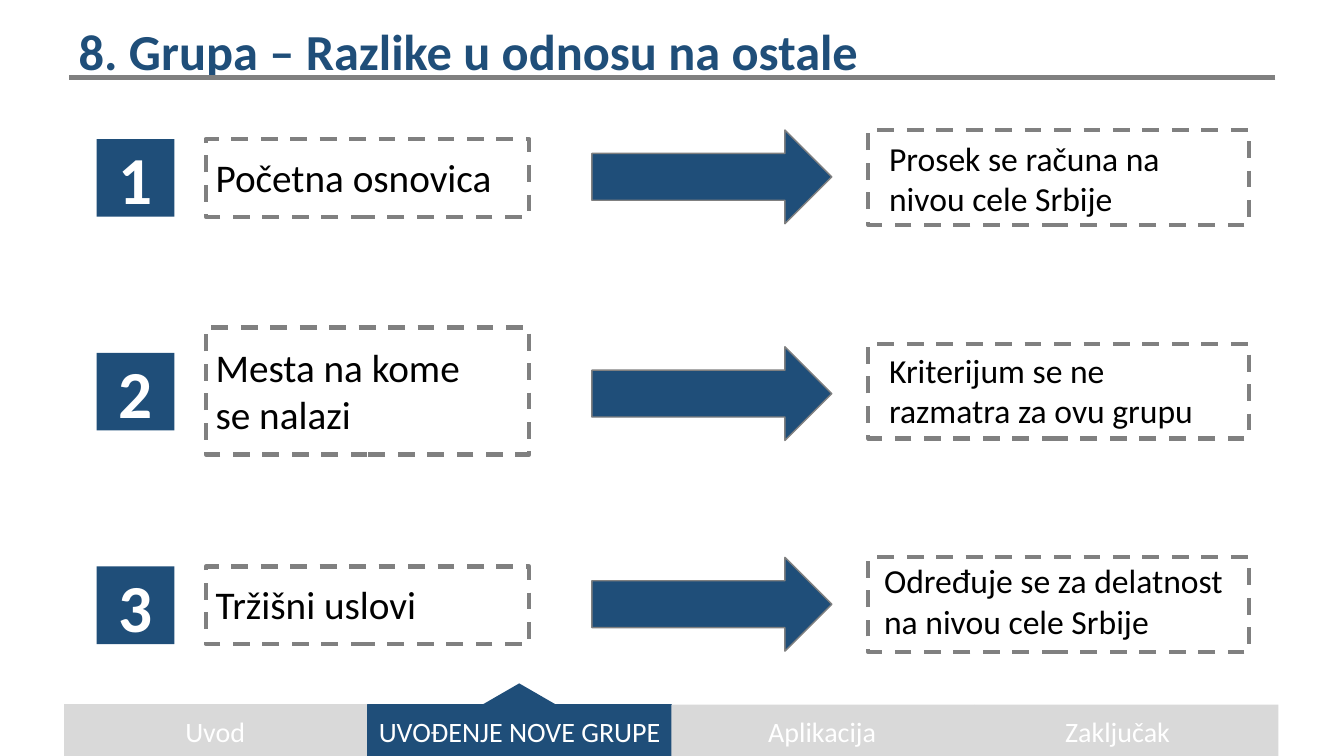
"""Build the slide on how group 8 differs from the others."""
from pptx import Presentation
from pptx.dml.color import RGBColor
from pptx.enum import dml, shapes, text
from pptx.util import Inches, Pt
from lxml import etree

TITLE = "8. Grupa – Razlike u odnosu na ostale"
ROWS = [
    {"top": 1.38, "item": "Početna osnovica", "item_at": (1.47, 3.21, 0.57),
     "frame": (1.38, 0.77), "arrow": 1.29,
     "note": "Prosek se računa na nivou cele Srbije",
     "note_at": (8.72, 1.32, 3.22, 0.91), "box": 1.29},
    {"top": 3.5, "item": "Mesta na kome se nalazi", "item_at": (3.36, 2.9, 1.04),
     "frame": (3.25, 1.26), "arrow": 3.44,
     "note": "Kriterijum se ne razmatra za ovu grupu",
     "note_at": (8.72, 3.42, 3.22, 0.91), "box": 3.41},
    {"top": 5.62, "item": "Tržišni uslovi", "item_at": (5.71, 3.98, 0.57),
     "frame": (5.62, 0.77), "arrow": 5.53,
     "note": "Određuje se za delatnost na nivou cele Srbije",
     "note_at": (8.67, 5.51, 3.8, 0.91), "box": 5.53},
]
TABS = [("Uvod", 1.07, 2.13), ("UVOĐENJE NOVE GRUPE", 3.56, 3.19),
        ("Aplikacija", 7.09, 2.13), ("Zaključak", 10.02, 2.13)]
ACTIVE = 1
COLORS = {"navy": "1F4E79", "gray": "808080", "light": "D9D9D9",
          "white": "FFFFFF", "black": "000000"}
KIND = shapes.MSO_SHAPE
ALIGN = text.PP_ALIGN


def color(name):
    """Return the named colour."""
    return RGBColor.from_string(COLORS[name])


def write(shape, words, size, tint, bold=False, align=ALIGN.LEFT):
    """Put one formatted paragraph into a shape."""
    shape.text_frame.text = words
    para = shape.text_frame.paragraphs[0]
    para.alignment = align
    font = para.font
    font.name, font.size, font.bold = "Calibri", Pt(size), bold
    font.color.rgb = color(tint)


def label(slide, at, words, size, tint, align=ALIGN.LEFT):
    """Add a wrapped text box."""
    box = slide.shapes.add_textbox(*map(Inches, at))
    box.text_frame.word_wrap = True
    write(box, words, size, tint, align=align)


def block(slide, kind, at, fill=None, line=None, width=1, dash=False):
    """Add a preset shape with plain fill and line."""
    shape = slide.shapes.add_shape(kind, *map(Inches, at))
    shape.shadow.inherit = False
    if fill:
        shape.fill.solid()
        shape.fill.fore_color.rgb = color(fill)
    else:
        shape.fill.background()
    if line:
        shape.line.color.rgb = color(line)
        shape.line.width = Pt(width)
    else:
        shape.line.fill.background()
    if dash:
        shape.line.dash_style = dml.MSO_LINE.DASH
    return shape


def head(slide):
    """Set the title and the rule beneath it."""
    title = slide.shapes.title
    title.left, title.top, title.width, title.height = map(
        Inches, (0.68, 0.15, 8.02, 0.71))
    frame = title.text_frame
    frame.word_wrap = False
    frame.auto_size = text.MSO_AUTO_SIZE.NONE
    frame.vertical_anchor = text.MSO_ANCHOR.TOP
    write(title, TITLE, 36, "navy", True)
    frame.paragraphs[0].line_spacing = 1.0
    frame.paragraphs[0].space_before = Pt(0)
    rule = slide.shapes.add_connector(
        shapes.MSO_CONNECTOR.STRAIGHT,
        *map(Inches, (12.65, 0.77, 0.68, 0.77)))
    rule.line.color.rgb = color("gray")
    rule.line.width = Pt(3)
    props = rule.element.spPr
    etree.SubElement(
        props, "{http://schemas.openxmlformats.org/drawingml/2006/main}effectLst")


def compare(slide, num, row):
    """Draw one numbered item, its arrow and its note."""
    badge = block(slide, KIND.RECTANGLE, (0.96, row["top"], 0.77, 0.77), "navy")
    badge.text_frame.vertical_anchor = text.MSO_ANCHOR.MIDDLE
    write(badge, str(num), 48, "white", True, ALIGN.CENTER)
    label(slide, (2.04, *row["item_at"]), row["item"], 28, "black")
    top, high = row["frame"]
    block(slide, KIND.RECTANGLE, (2.04, top, 3.21, high), None, "gray", 3, True)
    block(slide, KIND.RIGHT_ARROW, (5.87, row["arrow"], 2.38, 0.93), "navy", "gray")
    label(slide, row["note_at"], row["note"], 24, "black")
    block(slide, KIND.RECTANGLE, (8.61, row["box"], 3.78, 0.94),
          None, "gray", 3, True)


def tabs(slide):
    """Draw the section bar with its active marker."""
    for i in range(len(TABS)):
        fill = "navy" if i == ACTIVE else "light"
        line = fill if i <= ACTIVE else None
        block(slide, KIND.RECTANGLE, (0.64 + 3.01 * i, 6.99, 3.01, 0.51), fill, line)
    for words, left, wide in TABS:
        label(slide, (left, 7.04, wide, 0.44), words, 20, "white", ALIGN.CENTER)
    block(slide, KIND.ISOSCELES_TRIANGLE, (4.7, 6.78, 0.9, 0.26), "navy")


def main():
    """Build and save the slide."""
    deck = Presentation()
    deck.slide_width, deck.slide_height = Inches(13.33), Inches(7.5)
    slide = deck.slides.add_slide(deck.slide_layouts[5])
    head(slide)
    for num, row in enumerate(ROWS, 1):
        compare(slide, num, row)
    tabs(slide)
    deck.save("out.pptx")


if __name__ == "__main__":
    main()
